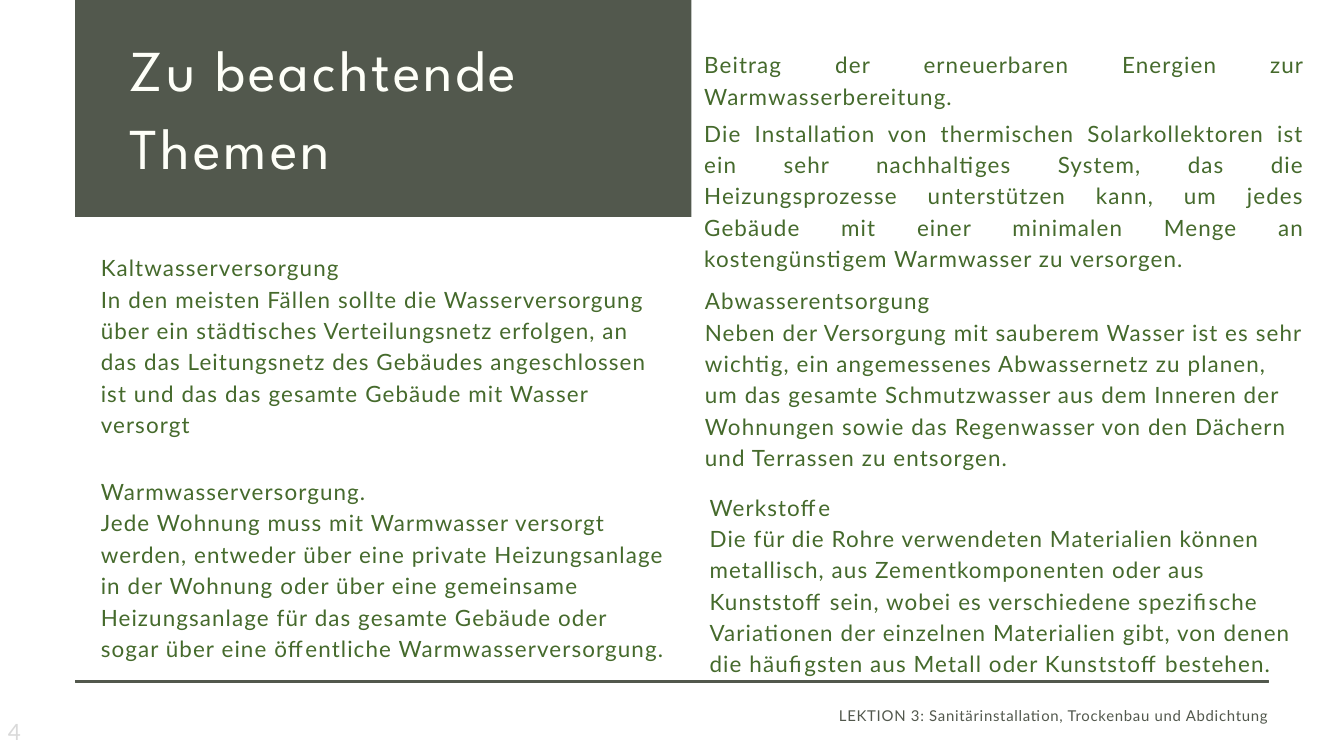
"""Builds the slide on the topics to consider in sanitary installation."""
from dataclasses import dataclass
from typing import Any

from pptx import Presentation
from pptx import util as u
from pptx.dml.color import RGBColor
from pptx.enum import shapes, text

COLUMNS, ROWS = 20, 11.25
ALIGN = text.PP_ALIGN
ANCHOR = text.MSO_ANCHOR


def colour(value):
    """Turn a hex string into a colour."""
    return RGBColor.from_string(value)


@dataclass
class Sheet:
    """Holds the style and the current slide."""
    deck: Any
    page: Any
    green: str = "456A2C"
    slate: str = "52584D"
    ivory: str = "FEFFF8"
    grey: str = "D9D9D9"
    body_font: str = "Lato"
    title_font: str = "League Spartan"
    body_size: float = 24
    tracking: float = 0.05

    def cells(self, left, top, width, height):
        """Convert grid columns and rows to slide lengths."""
        column = self.deck.slide_width / COLUMNS
        row = self.deck.slide_height / ROWS
        return [round(n * unit) for n, unit in
                zip((left, top, width, height), (column, row) * 2)]

    def set_text(self, shape, lines, size, font, ink, leading=None, after=0,
                 align=ALIGN.LEFT, anchor=ANCHOR.TOP, insets=(0, 0)):
        """Fill a shape with evenly formatted paragraphs."""
        frame = shape.text_frame
        frame.word_wrap = True
        frame.auto_size = text.MSO_AUTO_SIZE.NONE
        frame.vertical_anchor = anchor
        frame.margin_left = frame.margin_right = u.Inches(insets[0])
        frame.margin_top = frame.margin_bottom = u.Inches(insets[1])
        frame.text = "\n".join(lines)
        for para in frame.paragraphs:
            para.alignment = align
            para.space_before = u.Pt(0)
            para.space_after = u.Pt(after)
            if leading:
                para.line_spacing = u.Pt(leading)
            for span in para.runs:
                span.font.size = u.Pt(size)
                span.font.name = font
                span.font.color.rgb = colour(ink)
                tracking = round(size * self.tracking * 100)
                span.font._element.set("spc", str(tracking))

    def block(self, area, lines, size=None, ink=None, **layout):
        """Add a text box in the body font."""
        box = self.page.shapes.add_textbox(*self.cells(*area))
        self.set_text(box, lines, size or self.body_size, self.body_font,
                      ink or self.green, **layout)

    def bar(self, area, outline=None):
        """Add a slate rectangle."""
        shape = self.page.shapes.add_shape(
            shapes.MSO_SHAPE.RECTANGLE, *self.cells(*area))
        shape.shadow.inherit = False
        shape.fill.solid()
        shape.fill.fore_color.rgb = colour(self.slate)
        if outline:
            shape.line.color.rgb = colour(self.slate)
            shape.line.width = u.Pt(outline)
        else:
            shape.line.fill.background()

    def title(self, area, wording):
        """Format the title placeholder and bring it to the front."""
        title = self.page.shapes.title
        title.left, title.top, title.width, title.height = self.cells(*area)
        self.set_text(title, [wording], 62, self.title_font, self.ivory, 83.7)
        self.page.shapes._spTree.append(title._element)


def main():
    """Build and save the slide."""
    deck = Presentation()
    deck.slide_width, deck.slide_height = u.Inches(COLUMNS), u.Inches(ROWS)
    sheet = Sheet(deck, deck.slides.add_slide(deck.slide_layouts[5]))

    sheet.bar((1.12, 0, 9.17, 3.23))
    sheet.title((1.93, 0.37, 7.56, 2.32), "Zu beachtende Themen")
    sheet.bar((1.12, 10.12, 17.75, 0.04), outline=0.75)

    leading = 33.6
    sheet.block((10.48, 0.7, 8.93, 3.39), [
        "Beitrag der erneuerbaren Energien zur Warmwasserbereitung.",
        "Die Installation von thermischen Solarkollektoren ist ein sehr "
        "nachhaltiges System, das die Heizungsprozesse unterstützen kann, um "
        "jedes Gebäude mit einer minimalen Menge an kostengünstigem "
        "Warmwasser zu versorgen."],
        leading=leading, after=6, align=ALIGN.JUSTIFY)

    topics = [
        ((1.5, 3.72, 8.17), "Kaltwasserversorgung",
         "In den meisten Fällen sollte die Wasserversorgung über ein "
         "städtisches Verteilungsnetz erfolgen, an das das Leitungsnetz des "
         "Gebäudes angeschlossen ist und das das gesamte Gebäude mit Wasser "
         "versorgt"),
        ((1.5, 7.05, 8.5), "Warmwasserversorgung.",
         "Jede Wohnung muss mit Warmwasser versorgt werden, entweder über "
         "eine private Heizungsanlage in der Wohnung oder über eine "
         "gemeinsame Heizungsanlage für das gesamte Gebäude oder sogar über "
         "eine öffentliche Warmwasserversorgung."),
        ((10.49, 4.21, 8.93), "Abwasserentsorgung",
         "Neben der Versorgung mit sauberem Wasser ist es sehr wichtig, ein "
         "angemessenes Abwassernetz zu planen, um das gesamte Schmutzwasser "
         "aus dem Inneren der Wohnungen sowie das Regenwasser von den "
         "Dächern und Terrassen zu entsorgen."),
        ((10.56, 7.28, 8.81), "Werkstoffe",
         "Die für die Rohre verwendeten Materialien können metallisch, aus "
         "Zementkomponenten oder aus Kunststoff sein, wobei es verschiedene "
         "spezifische Variationen der einzelnen Materialien gibt, von denen "
         "die häufigsten aus Metall oder Kunststoff bestehen."),
    ]
    for place, heading, body in topics:
        sheet.block((*place, 2.83), [heading, body], leading=leading)

    sheet.block((0.02, 10.69, 2.33, 0.4), ["4"], ink=sheet.grey,
                anchor=ANCHOR.MIDDLE, insets=(0.1, 0.05))
    sheet.block((10.56, 10.47, 8.32, 0.29),
                ["LEKTION 3: Sanitärinstallation, Trockenbau und Abdichtung"],
                size=16, ink=sheet.slate, leading=22.4, align=ALIGN.RIGHT)
    deck.save("out.pptx")


if __name__ == "__main__":
    main()
